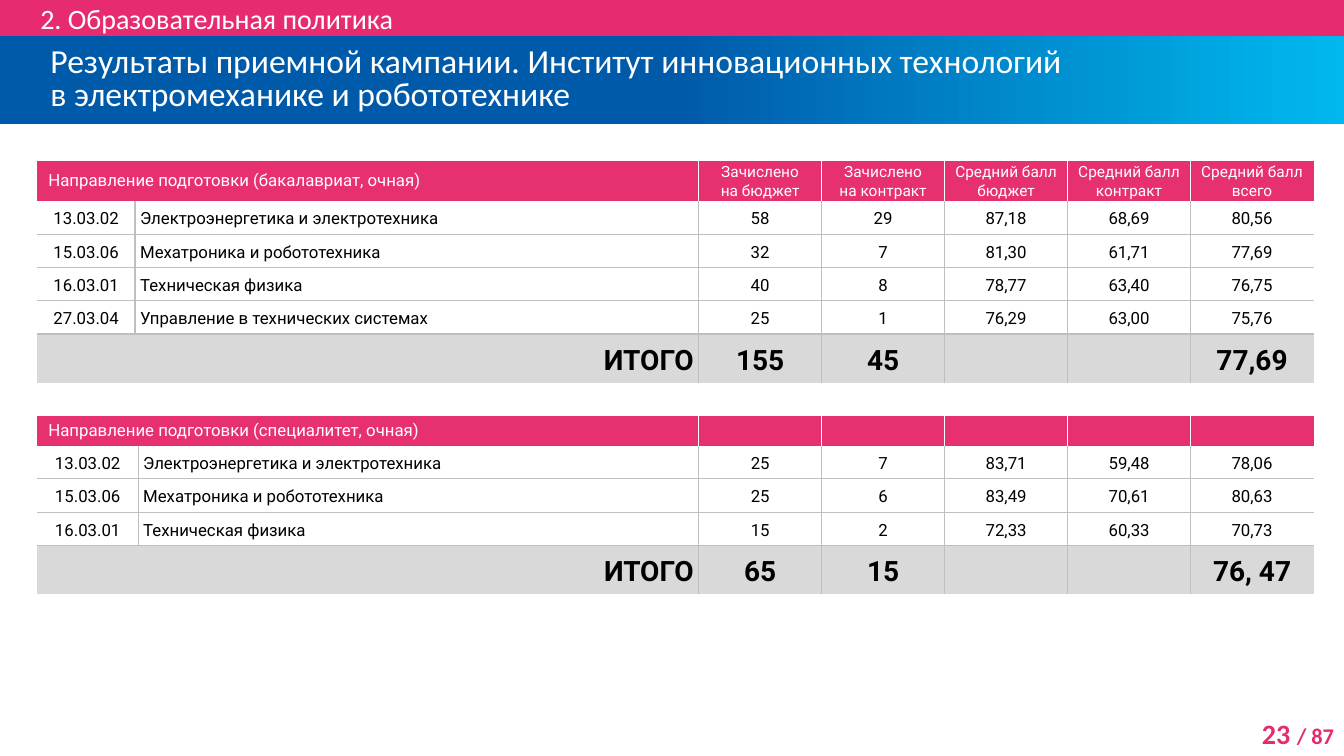
from dataclasses import dataclass

from lxml import etree
from pptx import Presentation
from pptx import util as u
from pptx.dml import color
from pptx.enum import shapes, text
from pptx.oxml import ns

ALIGN = text.PP_ALIGN


@dataclass(frozen=True)
class Theme:
    pink: str = "E72B70"
    header: str = "E73070"
    blue: str = "005AAA"
    cyan: str = "00B8EE"
    grid: str = "BFBFBF"
    total: str = "D9D9D9"
    white: str = "FFFFFF"
    black: str = "000000"
    head_font: str = "Calibri"
    table_font: str = "Roboto"
    title: int = 24
    large: int = 20
    page: int = 16
    body: int = 12
    column: int = 11


T = Theme()


@dataclass(frozen=True)
class Style:
    font: str
    size: int
    colour: str
    bold: bool = False
    align: ALIGN = ALIGN.LEFT
    spacing: float | u.Length | None = None


@dataclass(frozen=True)
class Band:
    top: float
    height: float
    indent: float
    label: str
    style: Style


@dataclass(frozen=True)
class Results:
    top: float
    code_width: float
    header_height: float
    rows: list[list[str]]


BANDS = [
    Band(0, 0.36, 0.4, "2. Образовательная политика",
         Style(T.head_font, T.large, T.white)),
    Band(0.36, 0.87, 0.5,
         "Результаты приемной кампании. Институт инновационных технологий\n"
         "в электромеханике и робототехнике",
         Style(T.head_font, T.title, T.white, spacing=u.Pt(24))),
]

TABLES = [
    Results(1.6, 0.97, 0.38, [
        ["Направление подготовки (бакалавриат, очная)", "", "Зачислено\nна бюджет",
         "Зачислено\nна контракт", "Средний балл бюджет", "Средний балл\nконтракт",
         "Средний балл всего"],
        ["13.03.02", "Электроэнергетика и электротехника", "58", "29", "87,18", "68,69", "80,56"],
        ["15.03.06", "Мехатроника и робототехника", "32", "7", "81,30", "61,71", "77,69"],
        ["16.03.01", "Техническая физика", "40", "8", "78,77", "63,40", "76,75"],
        ["27.03.04", "Управление в технических системах", "25", "1", "76,29", "63,00", "75,76"],
        ["ИТОГО", "", "155", "45", "", "", "77,69"],
    ]),
    Results(4.13, 1, 0.29, [
        ["Направление подготовки (специалитет, очная)", "", "", "", "", "", ""],
        ["13.03.02", "Электроэнергетика и электротехника", "25", "7", "83,71", "59,48", "78,06"],
        ["15.03.06", "Мехатроника и робототехника", "25", "6", "83,49", "70,61", "80,63"],
        ["16.03.01", "Техническая физика", "15", "2", "72,33", "60,33", "70,73"],
        ["ИТОГО", "", "65", "15", "", "", "76, 47"],
    ]),
]
TABLE_LEFT, NAME_END, SCORE_WIDTH = 0.37, 6.56, 1.22
ROW_HEIGHT, TOTAL_HEIGHT = 0.32, 0.47


def add_run(p, label: str, style: Style) -> None:
    r = p.add_run()
    r.text = label
    f = r.font
    f.name, f.size, f.bold = style.font, u.Pt(style.size), style.bold
    f.color.rgb = color.RGBColor.from_string(style.colour)


def write(tf, label: str, style: Style) -> None:
    """Fill the first paragraph; each newline becomes a line break."""
    p = tf.paragraphs[0]
    p.alignment = style.align
    if style.spacing:
        p.line_spacing = style.spacing
    if not label:
        end = etree.SubElement(p._p, ns.qn("a:endParaRPr"))
        end.set("sz", str(style.size * 100))
        return
    for i, line in enumerate(label.split("\n")):
        if i:
            p.add_line_break()
        add_run(p, line, style)


def add_band(s, band: Band):
    sp = s.shapes.add_shape(shapes.MSO_SHAPE.RECTANGLE, 0, u.Inches(band.top),
                            u.Inches(13.33), u.Inches(band.height))
    sp.shadow.inherit = False
    sp.line.fill.background()
    sp.fill.solid()
    sp.fill.fore_color.rgb = color.RGBColor.from_string(T.pink)
    tf = sp.text_frame
    tf.word_wrap = True
    tf.vertical_anchor = text.MSO_ANCHOR.MIDDLE
    tf.margin_left = u.Inches(band.indent)
    tf.margin_top = tf.margin_right = tf.margin_bottom = 0
    write(tf, band.label, band.style)
    return sp


def set_gradient(sp) -> None:
    """Blue up to the middle, then fading to cyan at the right."""
    sp.fill.gradient()
    sp.fill.gradient_angle = 0
    stops = sp.fill._fill._gradFill.find(ns.qn("a:gsLst"))
    for stop in list(stops):
        stops.remove(stop)
    for pos, rgb in ((0, T.blue), (50, T.blue), (100, T.cyan)):
        stop = etree.SubElement(stops, ns.qn("a:gs"), pos=str(pos * 1000))
        etree.SubElement(stop, ns.qn("a:srgbClr"), val=rgb)


def set_borders(cell, edges: dict[str, str | None]) -> None:
    tc_pr = cell._tc.get_or_add_tcPr()
    for side, rgb in edges.items():
        ln = etree.SubElement(tc_pr, ns.qn(f"a:ln{side}"), w=str(u.Pt(1)))
        if rgb:
            fill = etree.SubElement(ln, ns.qn("a:solidFill"))
            etree.SubElement(fill, ns.qn("a:srgbClr"), val=rgb)
        else:
            etree.SubElement(ln, ns.qn("a:noFill"))


def format_cell(cell, label: str, row: int, col: int, last_row: int) -> None:
    header, total = row == 0, row == last_row
    inner, outer = (T.white, T.header) if header else (T.grid, None)
    set_borders(cell, {
        "L": inner if col > 0 else outer,
        "R": inner if col < 6 else outer,
        "T": T.header if header else T.grid if row > 1 else None,
        "B": None if header or total else T.grid,
    })
    if header or total:
        cell.fill.solid()
        cell.fill.fore_color.rgb = color.RGBColor.from_string(T.header if header else T.total)
    else:
        cell.fill.background()
    cell.vertical_anchor = text.MSO_ANCHOR.MIDDLE
    side, edge = (0.07, 0) if header else (0.05, 0.05)
    cell.margin_left = u.Inches(0.11 if header and col == 0 else side)
    cell.margin_right = u.Inches(side)
    cell.margin_top = cell.margin_bottom = u.Inches(edge)
    if header:
        style = (Style(T.table_font, T.column, T.white, False, ALIGN.CENTER, 1.07) if col
                 else Style(T.table_font, T.body, T.white))
    else:
        align = (ALIGN.RIGHT if total and col == 0
                 else ALIGN.LEFT if col == 1 else ALIGN.CENTER)
        style = Style(T.table_font, T.large if total else T.body, T.black, total, align, 1.15)
    write(cell.text_frame, label, style)


def add_results(s, res: Results) -> None:
    last = len(res.rows) - 1
    widths = [res.code_width, NAME_END - res.code_width] + [SCORE_WIDTH] * 5
    heights = [res.header_height] + [ROW_HEIGHT] * (last - 1) + [TOTAL_HEIGHT]
    tbl = s.shapes.add_table(last + 1, 7, u.Inches(TABLE_LEFT), u.Inches(res.top),
                             u.Inches(sum(widths)), u.Inches(sum(heights))).table
    tbl.first_row = tbl.horz_banding = False
    for column, width in zip(tbl.columns, widths):
        column.width = u.Inches(width)
    for i, (labels, height) in enumerate(zip(res.rows, heights)):
        tbl.rows[i].height = u.Inches(height)
        for j, label in enumerate(labels):
            format_cell(tbl.cell(i, j), label, i, j, last)
    for i in (0, last):
        tbl.cell(i, 0).merge(tbl.cell(i, 1))


def add_page_number(s) -> None:
    tf = s.shapes.add_textbox(u.Inches(12.13), u.Inches(7.06),
                              u.Inches(1.2), u.Inches(0.44)).text_frame
    tf.word_wrap = True
    p = tf.paragraphs[0]
    p.alignment = ALIGN.RIGHT
    add_run(p, "23 ", Style(T.head_font, T.large, T.pink, True))
    add_run(p, "/ 87", Style(T.head_font, T.page, T.pink, True))


def main() -> None:
    prs = Presentation()
    prs.slide_width, prs.slide_height = u.Inches(13.33), u.Inches(7.5)
    s = prs.slides.add_slide(prs.slide_layouts[6])
    add_page_number(s)
    _, title = [add_band(s, band) for band in BANDS]
    set_gradient(title)
    for res in TABLES:
        add_results(s, res)
    prs.save("out.pptx")


if __name__ == "__main__":
    main()
